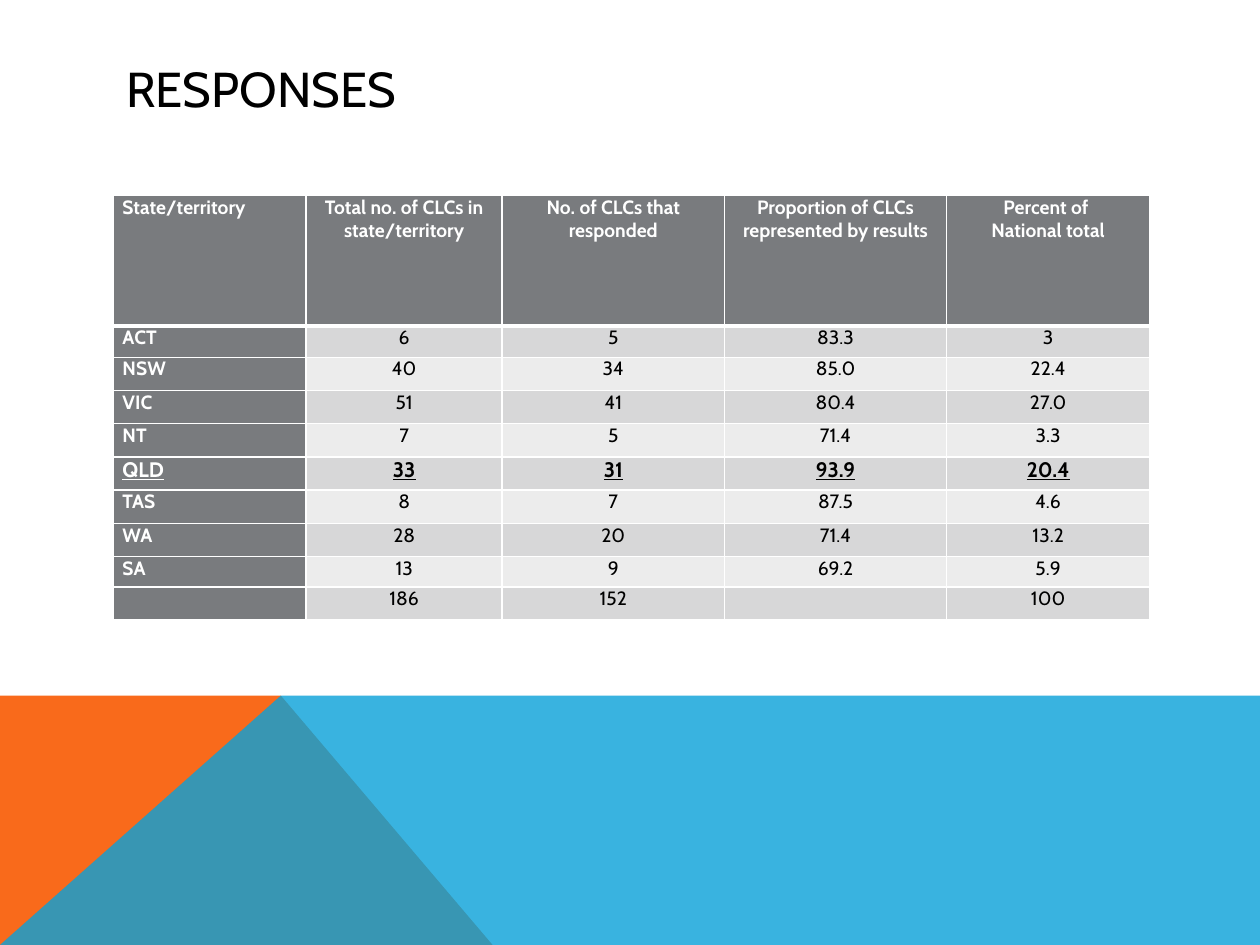
from dataclasses import dataclass

import pptx
import pptx.dml.color
import pptx.enum.text
import pptx.oxml
import pptx.oxml.ns
import pptx.util
from lxml import etree

Pt = pptx.util.Pt
Align = pptx.enum.text.PP_ALIGN
Anchor = pptx.enum.text.MSO_ANCHOR
qn = pptx.oxml.ns.qn

FONT = "Cabin"
WHITE, BLACK = "FFFFFF", "000000"
GREY, BANDS = "797B7E", ("D7D7D8", "ECECEC")
WIDE, HIGH = 720, 540
TOP, PEAK = 397.5, 160.5  # upper edge of the footer band, and its apex

COLS = (110, 112, 127, 127, 116)
HEAD = (
    "State/territory",
    "Total no. of CLCs in state/territory",
    "No. of CLCs that responded",
    "Proportion of CLCs represented by results",
    "Percent of \nNational total",
)


@dataclass
class Row:
    cells: tuple[str, ...]
    high: float = 19
    key: bool = False


ROWS = (
    Row(HEAD, 74.8),
    Row(("ACT", "6", "5", "83.3", "3"), 17.8),
    Row(("NSW", "40", "34", "85.0", "22.4")),
    Row(("VIC", "51", "41", "80.4", "27.0")),
    Row(("NT", "7", "5", "71.4", "3.3")),
    Row(("QLD", "33", "31", "93.9", "20.4"), key=True),
    Row(("TAS", "8", "7", "87.5", "4.6")),
    Row(("WA", "28", "20", "71.4", "13.2")),
    Row(("SA", "13", "9", "69.2", "5.9"), 17.4),
    Row(("", "186", "152", "", "100"), 18.7),
)


@dataclass
class Shard:
    points: tuple[tuple[float, float], ...]
    tint: str
    alpha: int = 100


SHARDS = (
    Shard(((0, HIGH), (0, TOP), (PEAK, TOP), (281.5, HIGH)), "F96A1B"),
    Shard(((0, HIGH), (PEAK, TOP), (WIDE, TOP), (WIDE, HIGH)), "08A1D9", 80),
)


def rgb(tint: str) -> pptx.dml.color.RGBColor:
    return pptx.dml.color.RGBColor.from_string(tint)


def paint(fill, tint: str) -> None:
    fill.solid()
    fill.fore_color.rgb = rgb(tint)


def style(para, size: float, tint: str) -> None:
    font = para.font
    font.name, font.size = FONT, Pt(size)
    font.color.rgb = rgb(tint)


def draw_shard(slide, shard: Shard) -> None:
    spots = [(Pt(x), Pt(y)) for x, y in shard.points]
    pen = slide.shapes.build_freeform(*spots[0])
    pen.add_line_segments(spots[1:], close=True)
    shape = pen.convert_to_shape()
    shape.shadow.inherit = False
    shape.line.fill.background()
    paint(shape.fill, shard.tint)
    if shard.alpha < 100:
        tone = shape.fill._xPr.find(".//" + qn("a:srgbClr"))
        etree.SubElement(tone, qn("a:alpha"), val=str(shard.alpha * 1000))


def draw_edges(cell, top: float, foot: float) -> None:
    props = cell._tc.get_or_add_tcPr()
    for side, width in (("L", 1), ("R", 1), ("T", top), ("B", foot)):
        line = etree.SubElement(props, qn(f"a:ln{side}"), w=str(Pt(width)))
        fill = etree.SubElement(line, qn("a:solidFill"))
        etree.SubElement(fill, qn("a:srgbClr"), val=WHITE)


def draw_cell(cell, row: Row, r: int, c: int) -> None:
    dark = r == 0 or c == 0
    draw_edges(cell, 3 if r == 1 else 1, 3 if r == 0 else 1)
    paint(cell.fill, GREY if dark else BANDS[(r - 1) % 2])
    cell.margin_left = cell.margin_right = Pt(5)
    cell.margin_top = cell.margin_bottom = 0
    cell.text = row.cells[c]
    for para in cell.text_frame.paragraphs:
        style(para, 12 if row.key else 11, WHITE if dark else BLACK)
        para.font.bold = dark or row.key
        para.font.underline = row.key
        para.alignment = Align.CENTER if c else Align.LEFT
        if not para.text:  # keeps an empty cell from stretching its row
            etree.SubElement(para._p, qn("a:endParaRPr"), sz="1100")


def draw_table(slide) -> None:
    total = sum(row.high for row in ROWS)
    frame = slide.shapes.add_table(
        len(ROWS), len(COLS), Pt(65), Pt(111.6), Pt(sum(COLS)), Pt(total)
    )
    table = frame.table
    for col, width in zip(table.columns, COLS):
        col.width = Pt(width)
    for r, row in enumerate(ROWS):
        table.rows[r].height = Pt(row.high)
        for c in range(len(COLS)):
            draw_cell(table.cell(r, c), row, r, c)


def draw_title(slide) -> None:
    title = slide.shapes.title
    title.left, title.top = Pt(65), Pt(29)
    title.width, title.height = Pt(592), Pt(43)
    title.text = "RESPONSES"
    title.text_frame.vertical_anchor = Anchor.MIDDLE
    para = title.text_frame.paragraphs[0]
    para.alignment = Align.LEFT
    style(para, 28, BLACK)


def main() -> None:
    deck = pptx.Presentation()
    deck.slide_width, deck.slide_height = Pt(WIDE), Pt(HIGH)
    slide = deck.slides.add_slide(deck.slide_layouts[5])
    paint(slide.background.fill, WHITE)

    # Footer band
    for shard in SHARDS:
        draw_shard(slide, shard)

    # Heading and results
    draw_title(slide)
    draw_table(slide)
    deck.save("out.pptx")


if __name__ == "__main__":
    main()
